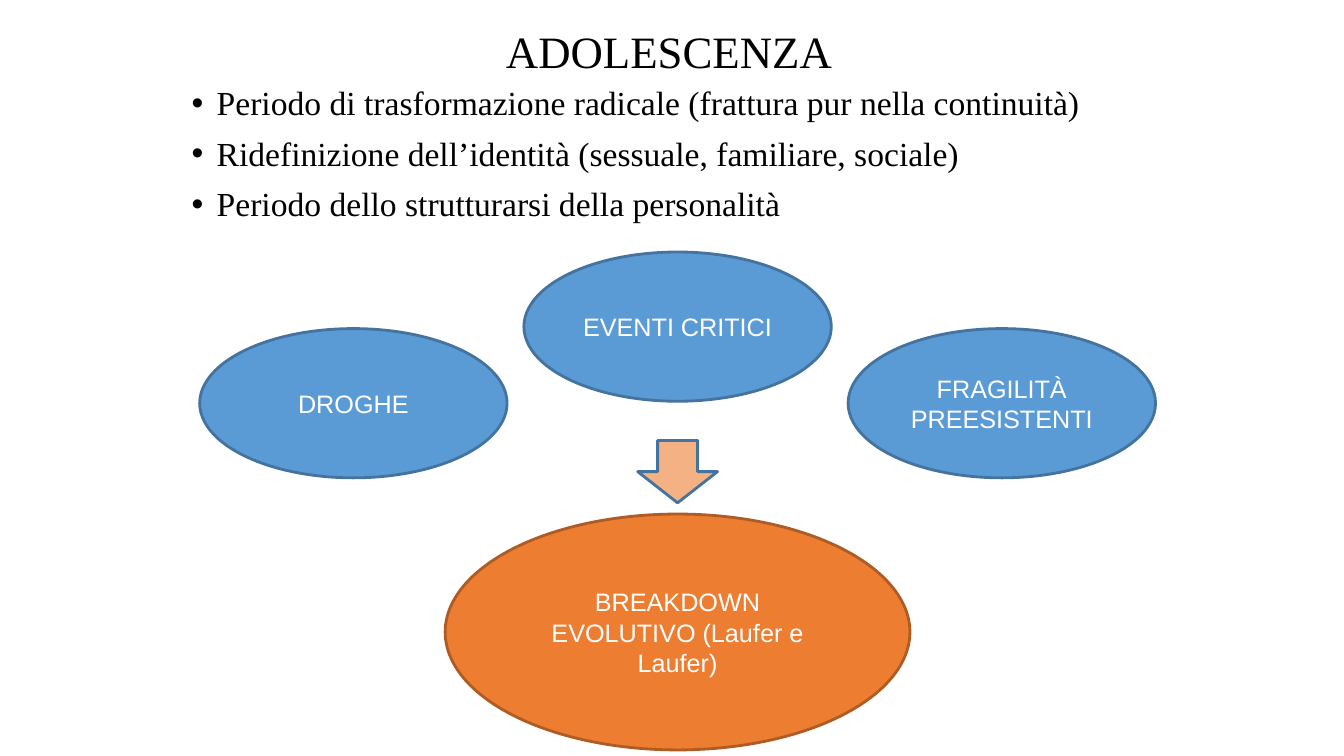
from lxml import etree
from pptx import Presentation
from pptx.dml.color import RGBColor
from pptx.enum.shapes import MSO_SHAPE
from pptx.enum.text import MSO_ANCHOR, PP_ALIGN
from pptx.oxml.ns import qn
from pptx.util import Pt

ELLIPSE, DOWN_ARROW = MSO_SHAPE.OVAL, MSO_SHAPE.DOWN_ARROW
MIDDLE, TOP = MSO_ANCHOR.MIDDLE, MSO_ANCHOR.TOP
CENTER, JUSTIFY = PP_ALIGN.CENTER, PP_ALIGN.JUSTIFY

BLUE, BLUE_EDGE = "5B9BD5", "43739E"
ORANGE, ORANGE_EDGE, PEACH = "ED7D31", "AF5C24", "F4B183"
BLACK, WHITE = "000000", "FFFFFF"

TITLE_FONT = {"name": "Times New Roman", "size": Pt(32)}
BODY_FONT = {"name": "Times New Roman", "size": Pt(24)}
LABEL_FONT = {"name": "Arial", "size": Pt(18)}

POINTS = [
    "Periodo di trasformazione radicale (frattura pur nella continuità)",
    "Ridefinizione dell’identità (sessuale, familiare, sociale)",
    "Periodo dello strutturarsi della personalità",
]
FACTORS = ["DROGHE", "EVENTI CRITICI", "FRAGILITÀ PREESISTENTI"]


def color(value):
    return RGBColor.from_string(value)


def set_format(target, values):
    for name, value in values.items():
        setattr(target, name, value)


def set_font(paragraph, values, font_color):
    set_format(paragraph.font, values)
    paragraph.font.color.rgb = color(font_color)


def add_bullet(paragraph, indent):
    properties = paragraph._p.get_or_add_pPr()
    properties.set("marL", str(Pt(indent)))
    properties.set("indent", str(-Pt(indent)))
    etree.SubElement(properties, qn("a:buFont")).set("typeface", "Arial")
    etree.SubElement(properties, qn("a:buChar")).set("char", "•")


def add_text(slide, box, lines, font, anchor, alignment, bulleted=False):
    frame = slide.shapes.add_textbox(*map(Pt, box)).text_frame
    margins = dict.fromkeys(
        ["margin_left", "margin_top", "margin_right", "margin_bottom"], 0)
    set_format(frame, {"word_wrap": True, "vertical_anchor": anchor, **margins})
    for index, line in enumerate(lines):
        paragraph = frame.add_paragraph() if index else frame.paragraphs[0]
        paragraph.text = line
        set_format(paragraph, {"alignment": alignment, "line_spacing": 0.9,
                               "space_before": Pt(10 if index else 0)})
        if bulleted:
            add_bullet(paragraph, 18)
        set_font(paragraph, font, BLACK)


def add_figure(slide, kind, box, fill, edge, label=""):
    shape = slide.shapes.add_shape(kind, *map(Pt, box))
    shape.shadow.inherit = False
    shape.fill.solid()
    shape.fill.fore_color.rgb = color(fill)
    shape.line.color.rgb = color(edge)
    shape.line.width = Pt(2)
    if label:
        set_format(shape.text_frame, {"word_wrap": True, "vertical_anchor": MIDDLE})
        paragraph = shape.text_frame.paragraphs[0]
        paragraph.text = label
        paragraph.alignment = CENTER
        set_font(paragraph, LABEL_FONT, WHITE)


def add_breakdown_diagram(slide, left, top, width, height):
    """Three factors, the middle one raised, leading down to the breakdown."""
    middle = left + width / 2
    result_width, result_height = 332, 168.5
    add_figure(slide, ELLIPSE,
               (middle - result_width / 2, top + height - result_height,
                result_width, result_height),
               ORANGE, ORANGE_EDGE, "BREAKDOWN EVOLUTIVO (Laufer e Laufer)")

    factor_width, factor_height, drop = 219.6, 106.6, 54.7
    step = (width - factor_width) / (len(FACTORS) - 1)
    for index, label in enumerate(FACTORS):
        factor_top = top if index == 1 else top + drop
        add_figure(slide, ELLIPSE,
                   (left + index * step, factor_top, factor_width, factor_height),
                   BLUE, BLUE_EDGE, label)

    arrow_width, arrow_height = 57, 44.6
    add_figure(slide, DOWN_ARROW,
               (middle - arrow_width / 2, top + 134.6, arrow_width, arrow_height),
               PEACH, BLUE_EDGE)


def main():
    presentation = Presentation()
    presentation.slide_width, presentation.slide_height = Pt(960), Pt(540)
    slide = presentation.slides.add_slide(presentation.slide_layouts[6])
    add_text(slide, (154, 16.5, 648, 44), ["ADOLESCENZA"], TITLE_FONT, MIDDLE, CENTER)
    add_text(slide, (136.8, 62, 686, 118), POINTS, BODY_FONT, TOP, JUSTIFY, bulleted=True)
    add_breakdown_diagram(slide, 142.6, 180, 682.8, 355.7)
    presentation.save("out.pptx")


if __name__ == "__main__":
    main()
